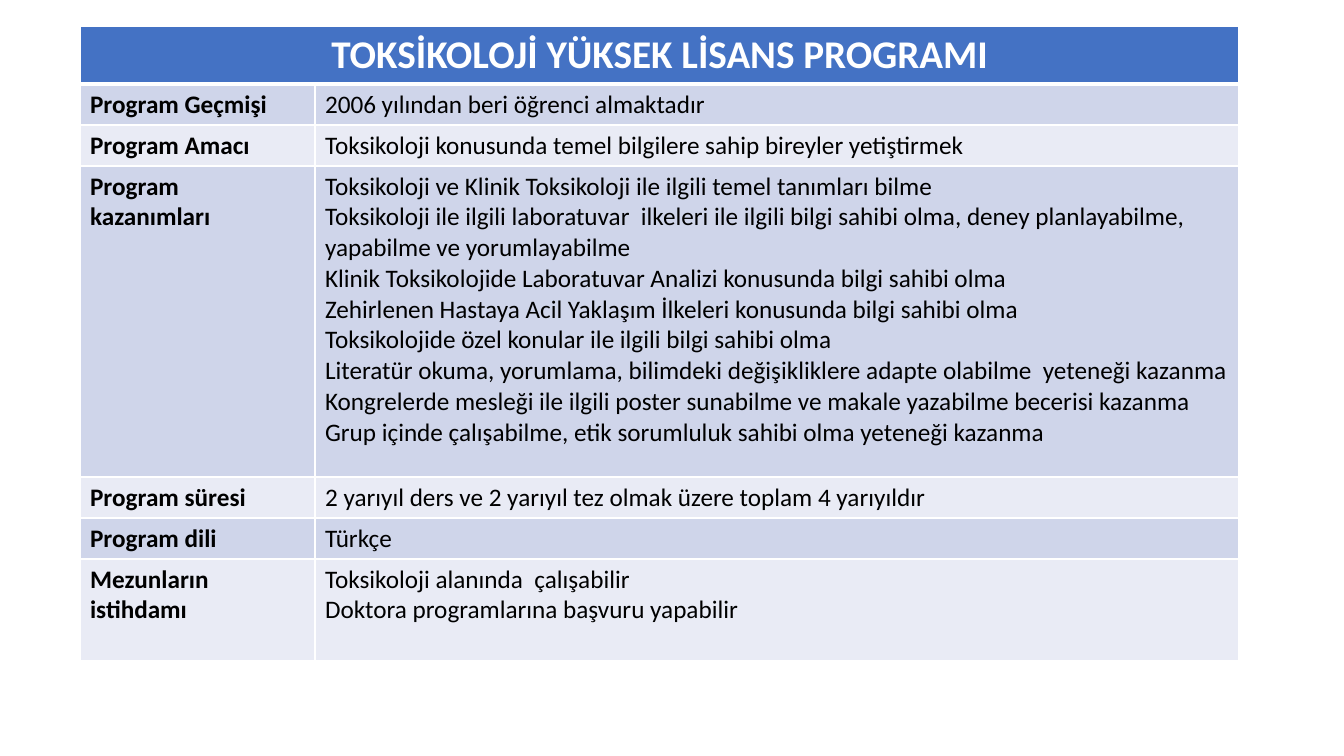
from lxml import etree
from pptx import Presentation
from pptx import util as u
from pptx.dml.color import RGBColor
from pptx.enum import text
from pptx.oxml import ns

HEADING = "TOKSİKOLOJİ YÜKSEK LİSANS PROGRAMI"
PROGRAM = [
    ("Program Geçmişi", 41, ["2006 yılından beri öğrenci almaktadır"]),
    ("Program Amacı", 41, ["Toksikoloji konusunda temel bilgilere sahip bireyler yetiştirmek"]),
    ("Program kazanımları", 311, [
        "Toksikoloji ve Klinik Toksikoloji ile ilgili temel tanımları bilme",
        "Toksikoloji ile ilgili laboratuvar  ilkeleri ile ilgili bilgi sahibi olma, "
        "deney planlayabilme, yapabilme ve yorumlayabilme",
        "Klinik Toksikolojide Laboratuvar Analizi konusunda bilgi sahibi olma",
        "Zehirlenen Hastaya Acil Yaklaşım İlkeleri konusunda bilgi sahibi olma",
        "Toksikolojide özel konular ile ilgili bilgi sahibi olma",
        "Literatür okuma, yorumlama, bilimdeki değişikliklere adapte olabilme  yeteneği kazanma",
        "Kongrelerde mesleği ile ilgili poster sunabilme ve makale yazabilme becerisi kazanma",
        "Grup içinde çalışabilme, etik sorumluluk sahibi olma yeteneği kazanma",
    ]),
    ("Program süresi", 41, ["2 yarıyıl ders ve 2 yarıyıl tez olmak üzere toplam 4 yarıyıldır"]),
    ("Program dili", 41, ["Türkçe"]),
    ("Mezunların istihdamı", 102, [
        "Toksikoloji alanında  çalışabilir",
        "Doktora programlarına başvuru yapabilir",
    ]),
]
LEFT, TOP = 80, 26
COLUMNS = [235, 924]
HEADING_HEIGHT = 57
BANDS = ["CFD5EA", "E9EBF5"]
BLUE, WHITE, BLACK = "4472C4", "FFFFFF", "000000"


def px(length):
    return u.Emu(round(length * 914400 / 100.8))


def color(value):
    return RGBColor.from_string(value)


def set_borders(cell, top, bottom):
    properties = cell._tc.get_or_add_tcPr()
    widths = [("a:lnL", 1), ("a:lnR", 1), ("a:lnT", top), ("a:lnB", bottom)]
    for position, (tag, width) in enumerate(widths):
        line = etree.Element(ns.qn(tag), w=str(u.Pt(width)))
        fill = etree.SubElement(line, ns.qn("a:solidFill"))
        etree.SubElement(fill, ns.qn("a:srgbClr"), val=WHITE)
        properties.insert(position, line)


def fill_cell(cell, lines, fill, size=18, ink=BLACK, bold=False, align=text.PP_ALIGN.LEFT,
              top=1, bottom=1):
    cell.fill.solid()
    cell.fill.fore_color.rgb = color(fill)
    set_borders(cell, top, bottom)
    cell.text_frame.text = "\n".join(lines)
    for paragraph in cell.text_frame.paragraphs:
        paragraph.alignment = align
        font = paragraph.font
        font.name, font.size, font.bold = "Calibri", u.Pt(size), bold
        font.color.rgb = color(ink)


def main():
    presentation = Presentation()
    presentation.slide_width, presentation.slide_height = px(1344), px(756)
    slide = presentation.slides.add_slide(presentation.slide_layouts[6])

    heights = [HEADING_HEIGHT] + [height for _, height, _ in PROGRAM]
    table = slide.shapes.add_table(len(heights), len(COLUMNS), px(LEFT), px(TOP),
                                   px(sum(COLUMNS)), px(sum(heights))).table
    for column, width in zip(table.columns, COLUMNS):
        column.width = px(width)
    for row, height in zip(table.rows, heights):
        row.height = px(height)

    table.cell(0, 0).merge(table.cell(0, 1))
    fill_cell(table.cell(0, 0), [HEADING], BLUE, size=28, ink=WHITE, bold=True,
              align=text.PP_ALIGN.CENTER, bottom=3)
    for index, (label, _, lines) in enumerate(PROGRAM):
        band = BANDS[index % 2]
        top = 3 if index == 0 else 1
        fill_cell(table.cell(index + 1, 0), [label], band, bold=True, top=top)
        fill_cell(table.cell(index + 1, 1), lines, band, top=top)

    presentation.save("out.pptx")


if __name__ == "__main__":
    main()
